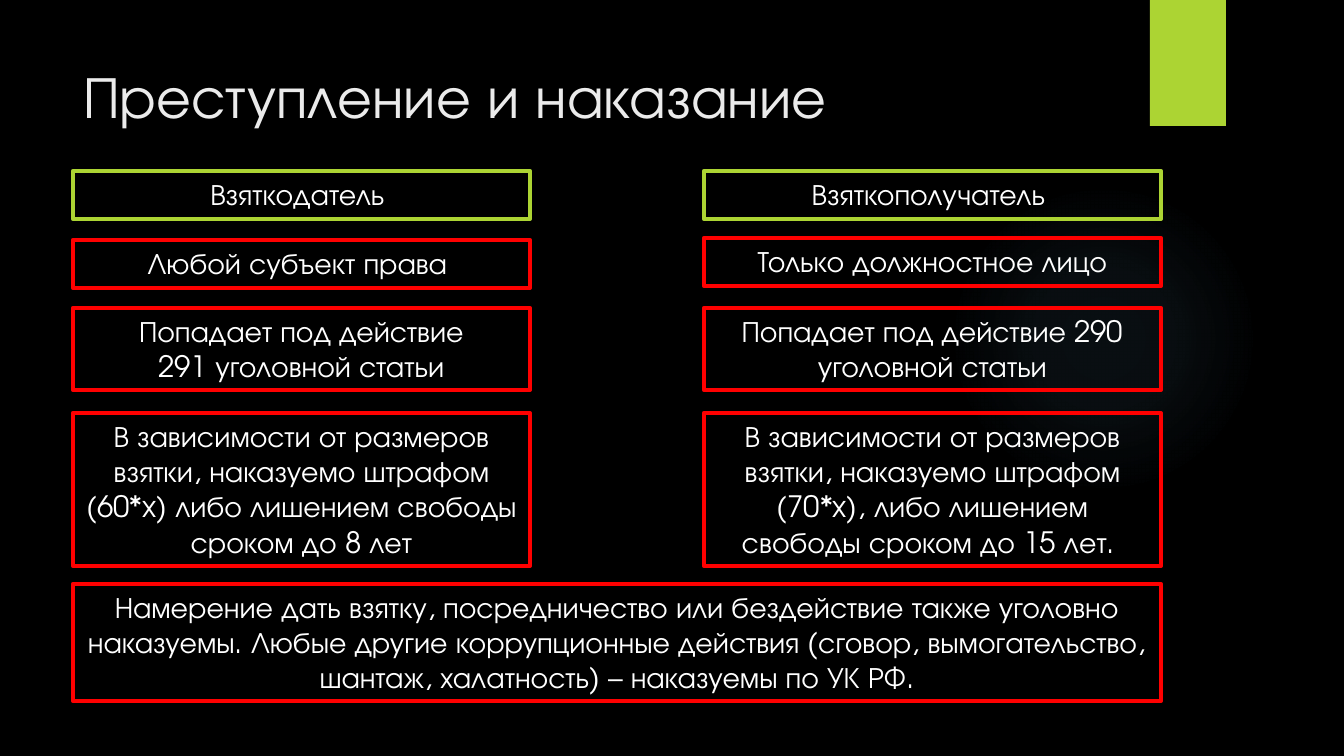
from lxml import etree
from pptx import Presentation
from pptx.dml.color import RGBColor
from pptx.enum.shapes import MSO_SHAPE as Shape
from pptx.enum.text import MSO_ANCHOR as Anchor, MSO_AUTO_SIZE as AutoSize, PP_ALIGN as Align
from pptx.oxml import parse_xml
from pptx.util import Pt

PX = 914400 / 100.8
FONT = "TeX Gyre Adventor"
GREEN, RED, WHITE, GLOW = "ACD433", "FF0000", "FFFFFF", "7AC4F0"
rgb = RGBColor.from_string


def emu(*lengths):
    return [round(length * PX) for length in lengths]


def add_plain(kind, *box):
    shape = slide.shapes.add_shape(kind, *emu(*box))
    shape.shadow.inherit = False
    shape.fill.background()
    shape.line.fill.background()
    return shape


deck = Presentation()
deck.slide_width, deck.slide_height = emu(1344, 756)
slide = deck.slides.add_slide(deck.slide_layouts[5])
slide.background.fill.solid()
slide.background.fill.fore_color.rgb = rgb("000000")

# Soft round glow, fading out towards its edge
glow = add_plain(Shape.OVAL, 949, 184, 310, 310)
stops = "".join(
    f'<a:gs pos="{at * 1000}"><a:srgbClr val="{GLOW}"><a:alpha val="{alpha * 1000}"/></a:srgbClr></a:gs>'
    for at, alpha in [(0, 7), (36, 6), (69, 0), (100, 0)]
)
no_fill = glow.fill._xPr.find("{*}noFill")
no_fill.getparent().replace(no_fill, parse_xml(
    '<a:gradFill xmlns:a="http://schemas.openxmlformats.org/drawingml/2006/main">'
    f'<a:gsLst>{stops}</a:gsLst><a:path path="circle">'
    '<a:fillToRect l="50000" t="50000" r="50000" b="50000"/></a:path></a:gradFill>'
))

# Green bookmark at the top edge
bookmark = add_plain(Shape.RECTANGLE, 1150, 0, 76, 126)
bookmark.fill.solid()
bookmark.fill.fore_color.rgb = rgb(GREEN)

# Title
title = slide.shapes.title
title.left, title.top, title.width, title.height = emu(73, 55, 1037, 154)
title.text_frame.text = "Преступление и наказание"
title.text_frame.vertical_anchor = Anchor.TOP
title.text_frame.auto_size = AutoSize.NONE
heading = title.text_frame.paragraphs[0]
heading.alignment = Align.LEFT
heading.font.size, heading.font.name = Pt(42), FONT
heading.font.color.rgb = rgb("EBEBEB")

# Giver and taker columns, then the conclusion across both
GIVER, TAKER, COLUMN, FULL = 73, 704, 457, 1088
statements = [
    (GIVER, 171, COLUMN, 48, GREEN, "Взяткодатель "),
    (TAKER, 171, COLUMN, 48, GREEN, "Взяткополучатель "),
    (GIVER, 240, COLUMN, 48, RED, "Любой субъект права "),
    (TAKER, 238, COLUMN, 48, RED, "Только должностное лицо"),
    (GIVER, 308, COLUMN, 82, RED, "Попадает под действие\n291 уголовной статьи"),
    (TAKER, 308, COLUMN, 82, RED, "Попадает под действие 290 уголовной статьи"),
    (GIVER, 413, COLUMN, 153, RED,
     "В зависимости от размеров взятки, наказуемо штрафом (60*x) "
     "либо лишением свободы сроком до 8 лет"),
    (TAKER, 413, COLUMN, 153, RED,
     "В зависимости от размеров взятки, наказуемо штрафом (70*x), "
     "либо лишением свободы сроком до 15 лет. "),
    (GIVER, 584, FULL, 117, RED,
     "Намерение дать взятку, посредничество или бездействие также уголовно наказуемы. "
     "Любые другие коррупционные действия (сговор, вымогательство, шантаж, халатность) "
     "– наказуемы по УК РФ."),
]
for left, top, width, height, border, wording in statements:
    statement = add_plain(Shape.RECTANGLE, left, top, width, height)
    statement.line.color.rgb = rgb(border)
    statement.line.width = Pt(3)
    frame = statement.text_frame
    frame.text = wording
    frame.word_wrap = True
    frame.auto_size = AutoSize.SHAPE_TO_FIT_TEXT
    frame.vertical_anchor = Anchor.TOP
    for paragraph in frame.paragraphs:
        paragraph.alignment = Align.CENTER
        paragraph.font.size, paragraph.font.name = Pt(21), FONT
        paragraph.font.color.rgb = rgb(WHITE)

deck.save("out.pptx")
